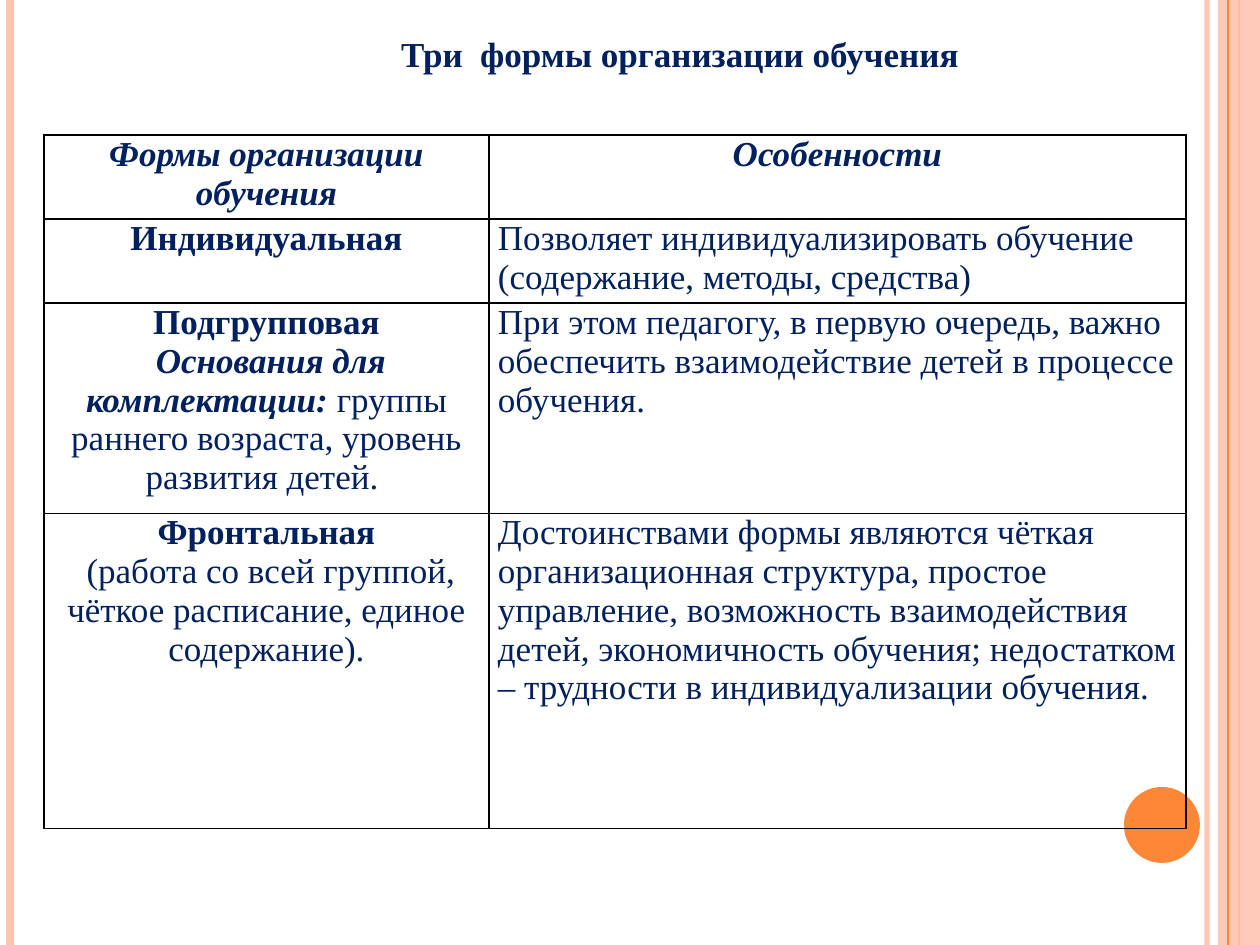
"""Build a slide with a table of the three forms of organising teaching."""
from dataclasses import dataclass

import lxml.etree
import pptx
import pptx.dml.color
import pptx.enum.shapes
import pptx.enum.text
import pptx.oxml
import pptx.oxml.ns
import pptx.util

EMU_PER_PIXEL = 914400 / 126
WIDTH, HEIGHT = 1260, 945
PINK, ORANGE, NAVY, BLACK, WHITE = "FEC3AE", "FE8637", "002060", "000000", "FFFFFF"
CENTER = pptx.enum.text.PP_ALIGN.CENTER
LEFT = pptx.enum.text.PP_ALIGN.LEFT
SHAPE = pptx.enum.shapes.MSO_SHAPE


@dataclass(frozen=True)
class Stripe:
    """A full-height vertical line."""
    x: int
    color: str
    points: float
    opacity: int = 100


@dataclass(frozen=True)
class Span:
    """A piece of text with one format."""
    text: str
    bold: bool = False
    italic: bool = False


@dataclass(frozen=True)
class Entry:
    """Paragraphs of one table cell, each a list of spans."""
    paragraphs: list[list[Span]]
    align: pptx.enum.text.PP_ALIGN = CENTER


BACK_STRIPES = [
    Stripe(1207, PINK, 3, 93),
    Stripe(10, PINK, 4.5),
    Stripe(1239, ORANGE, 1.5),
]
FRONT_STRIPE = Stripe(1228, ORANGE, 0.75)

COLUMN_WIDTHS = [445, 697]
ROW_HEIGHTS = [84, 84, 210, 315]
ROWS = [
    [
        Entry([[Span("Формы организации обучения", True, True)]]),
        Entry([[Span("Особенности", True, True)]]),
    ],
    [
        Entry([[Span("Индивидуальная", True)]]),
        Entry([[Span("Позволяет индивидуализировать обучение (содержание, методы, средства)")]], LEFT),
    ],
    [
        Entry([
            [Span("Подгрупповая", True)],
            [
                Span(" ", True),
                Span("Основания для комплектации:", True, True),
                Span(" группы раннего возраста, уровень развития детей. "),
            ],
        ]),
        Entry([[Span("При этом педагогу, в первую очередь, важно обеспечить "
                     "взаимодействие детей в процессе обучения.")]], LEFT),
    ],
    [
        Entry([
            [Span("Фронтальная", True)],
            [Span(" (работа со всей группой, чёткое расписание, единое содержание).")],
        ]),
        Entry([[Span("Достоинствами формы являются чёткая организационная структура, "
                     "простое управление, возможность взаимодействия детей, "
                     "экономичность обучения; недостатком – трудности в "
                     "индивидуализации обучения.")]], LEFT),
    ],
]


def px(length: int) -> pptx.util.Emu:
    """Convert pixels to EMU."""
    return pptx.util.Emu(round(length * EMU_PER_PIXEL))


def rgb(color: str) -> pptx.dml.color.RGBColor:
    """Convert a hex string to a colour."""
    return pptx.dml.color.RGBColor.from_string(color)


def set_opacity(element, percent: int) -> None:
    """Make the solid colour inside an element partly transparent."""
    if percent < 100:
        color = element.find(".//" + pptx.oxml.ns.qn("a:srgbClr"))
        alpha = lxml.etree.SubElement(color, pptx.oxml.ns.qn("a:alpha"))
        alpha.set("val", str(percent * 1000))


def add_stripe(slide, stripe: Stripe) -> None:
    """Draw a vertical line over the whole slide height."""
    line = slide.shapes.add_connector(
        pptx.enum.shapes.MSO_CONNECTOR.STRAIGHT, px(stripe.x), 0, px(stripe.x), px(HEIGHT))
    line.line.color.rgb = rgb(stripe.color)
    line.line.width = pptx.util.Pt(stripe.points)
    properties = line._element.spPr
    set_opacity(properties, stripe.opacity)
    lxml.etree.SubElement(properties, pptx.oxml.ns.qn("a:effectLst"))


def add_block(slide, kind, left: int, top: int, width: int, height: int,
              color: str, opacity: int = 100) -> None:
    """Draw a filled shape without an outline."""
    block = slide.shapes.add_shape(kind, px(left), px(top), px(width), px(height))
    block.shadow.inherit = False
    block.fill.solid()
    block.fill.fore_color.rgb = rgb(color)
    block.line.fill.background()
    set_opacity(block._element.spPr, opacity)


def write_text(frame, entry: Entry) -> None:
    """Fill a text frame with formatted paragraphs."""
    for index, spans in enumerate(entry.paragraphs):
        para = frame.add_paragraph() if index else frame.paragraphs[0]
        para.alignment = entry.align
        for span in spans:
            run = para.add_run()
            run.text = span.text
            values = {"name": "Times New Roman", "size": pptx.util.Pt(20),
                      "bold": span.bold, "italic": span.italic}
            for name, value in values.items():
                setattr(run.font, name, value)
            run.font.color.rgb = rgb(NAVY)


def add_borders(cell) -> None:
    """Give a cell thin black lines on all sides."""
    properties = cell._tc.get_or_add_tcPr()
    for side in ("lnL", "lnR", "lnT", "lnB"):
        properties.append(pptx.oxml.parse_xml(
            f'<a:{side} {pptx.oxml.ns.nsdecls("a")} w="12700"><a:solidFill>'
            f'<a:srgbClr val="{BLACK}"/></a:solidFill></a:{side}>'))


def add_forms_table(slide, left: int, top: int) -> None:
    """Draw the table of forms and their features."""
    table = slide.shapes.add_table(
        len(ROWS), len(COLUMN_WIDTHS), px(left), px(top),
        px(sum(COLUMN_WIDTHS)), px(sum(ROW_HEIGHTS))).table
    table.first_row = table.horz_banding = False
    for column, width in zip(table.columns, COLUMN_WIDTHS):
        column.width = px(width)
    margins = {"margin_left": px(9), "margin_right": px(9), "margin_top": 0, "margin_bottom": 0}
    for row, height, entries in zip(table.rows, ROW_HEIGHTS, ROWS):
        row.height = px(height)
        for cell, entry in zip(row.cells, entries):
            for name, value in margins.items():
                setattr(cell, name, value)
            add_borders(cell)
            cell.fill.background()
            write_text(cell.text_frame, entry)


def add_title(slide) -> None:
    """Write the slide heading."""
    box = slide.shapes.add_textbox(px(382), px(26), px(596), px(55))
    box.text_frame.word_wrap = False
    box.text_frame.auto_size = pptx.enum.text.MSO_AUTO_SIZE.SHAPE_TO_FIT_TEXT
    write_text(box.text_frame, Entry([[Span("Три  формы организации обучения", True)]]))


def main() -> None:
    """Build and save the deck."""
    deck = pptx.Presentation()
    deck.slide_width, deck.slide_height = px(WIDTH), px(HEIGHT)
    page = deck.slides.add_slide(deck.slide_layouts[6])
    page.background.fill.solid()
    page.background.fill.fore_color.rgb = rgb(WHITE)
    for stripe in BACK_STRIPES:
        add_stripe(page, stripe)
    add_block(page, SHAPE.RECTANGLE, 1218, 0, 42, HEIGHT, PINK, 87)
    add_stripe(page, FRONT_STRIPE)
    add_block(page, SHAPE.OVAL, 1124, 787, 76, 76, ORANGE)
    add_title(page)
    add_forms_table(page, 44, 135)
    deck.save("out.pptx")


if __name__ == "__main__":
    main()
